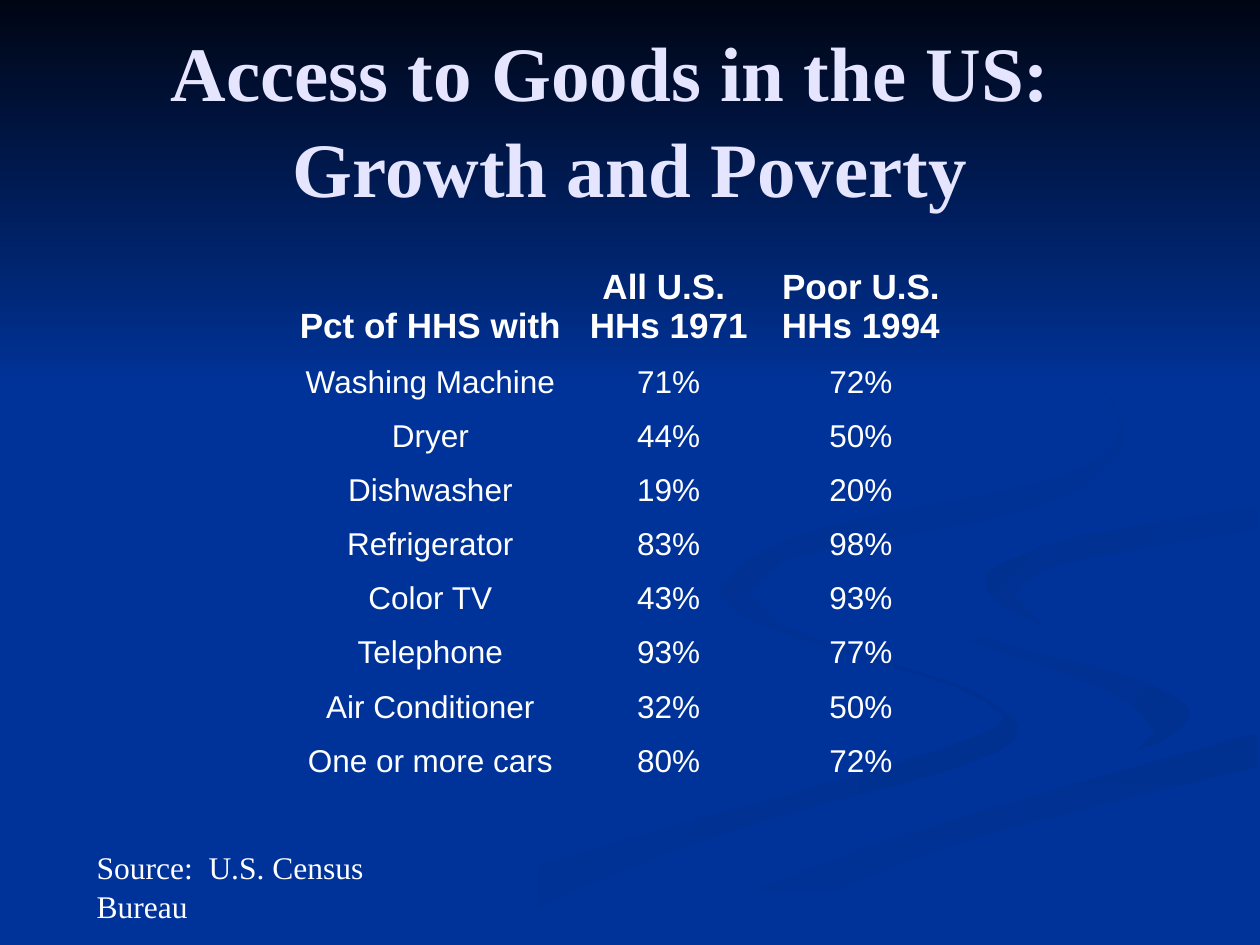
from dataclasses import dataclass

import pptx
import pptx.dml.color
import pptx.enum.text
import pptx.util

Cm = pptx.util.Cm
ALIGN = pptx.enum.text.PP_ALIGN
ANCHOR = pptx.enum.text.MSO_ANCHOR
PLAIN_TABLE = "{2D5ABB26-0587-4C30-8999-92F81FD0307C}"
CURVE_STEPS = 5


@dataclass(frozen=True)
class Theme:
    background: str = "003399"
    shade: str = "003090"
    night: str = "000514"
    title_color: str = "E5E5FF"
    text_color: str = "FFFFFF"
    serif: str = "Times New Roman"
    sans: str = "Arial"
    title_size: int = 44
    header_size: int = 20
    body_size: int = 18
    serif_spacing: float = 1.04


THEME = Theme()
LIGHT_TO_DARK = (THEME.background, THEME.shade)
DARK_TO_LIGHT = (THEME.shade, THEME.background)

RIBBONS = [
    (LIGHT_TO_DARK, 0,
     [(575, 459), (594, 485), (682, 519), (781, 553), (791, 597), (564, 665), (361, 749)],
     [(300, 749), (417, 690), (749, 594), (781, 556), (611, 499), (570, 472)]),
    (LIGHT_TO_DARK, 45,
     [(724, 464), (758, 498), (905, 540), (943, 570), (894, 605)],
     [(917, 580), (880, 549), (755, 505)]),
    (DARK_TO_LIGHT, 90,
     [(503, 749), (630, 693), (797, 638), (998, 581)],
     [(998, 609), (752, 672), (571, 749)]),
    ((THEME.background, THEME.background), 0,
     [(725, 464), (759, 498), (905, 540), (942, 579), (780, 634), (477, 749)],
     [(503, 749), (696, 669), (999, 581)],
     [(999, 538), (817, 492), (786, 453), (999, 402)],
     [(999, 387), (788, 422), (727, 454)]),
    (DARK_TO_LIGHT, 45,
     [(781, 460), (791, 478), (826, 496)],
     [(805, 472), (843, 448), (998, 420)],
     [(998, 402), (849, 427), (785, 453)]),
    (DARK_TO_LIGHT, 45,
     [(683, 430), (825, 402), (892, 354), (854, 283), (762, 233)],
     [(846, 279), (889, 335), (842, 378), (649, 420), (577, 462), (622, 500)],
     [(593, 470), (624, 444)]),
]

GOODS = [
    ("Pct of HHS with", "All U.S.  HHs 1971", "Poor U.S. HHs 1994"),
    ("Washing Machine", "71%", "72%"),
    ("Dryer", "44%", "50%"),
    ("Dishwasher", "19%", "20%"),
    ("Refrigerator", "83%", "98%"),
    ("Color TV", "43%", "93%"),
    ("Telephone", "93%", "77%"),
    ("Air Conditioner", "32%", "50%"),
    ("One or more cars", "80%", "72%"),
]


def smooth_edge(points):
    padded = [points[0], *points, points[-1]]
    curve = []
    for before, start, end, after in zip(padded, padded[1:], padded[2:], padded[3:]):
        for step in range(CURVE_STEPS):
            t = step / CURVE_STEPS
            curve.append(tuple(
                b + t / 2 * (c - a + t * (2 * a - 5 * b + 4 * c - d + t * (3 * (b - c) + d - a)))
                for a, b, c, d in zip(before, start, end, after)))
    return curve + [points[-1]]


class SlideBuilder:
    def __init__(self, presentation, theme):
        self.theme = theme
        self.slide = presentation.slides.add_slide(presentation.slide_layouts[5])
        fill = self.slide.background.fill
        fill.solid()
        fill.fore_color.rgb = self.color(theme.background)

    def color(self, value):
        return pptx.dml.color.RGBColor.from_string(value)

    def format_text(self, text_frame, font_name, size, color, bold=False,
                    alignment=ALIGN.LEFT, spacing=None):
        text_frame.word_wrap = True
        for paragraph in text_frame.paragraphs:
            paragraph.alignment = alignment
            if spacing:
                paragraph.line_spacing = spacing
            for run in paragraph.runs:
                run.font.name = font_name
                run.font.size = pptx.util.Pt(size)
                run.font.bold = bold
                run.font.color.rgb = self.color(color)

    def outline(self, colors, angle, points):
        builder = self.slide.shapes.build_freeform(*points[0], scale=Cm(2.54) / 100)
        builder.add_line_segments(points[1:], close=True)
        shape = builder.convert_to_shape()
        shape.shadow.inherit = False
        shape.line.fill.background()
        shape.fill.gradient()
        shape.fill.gradient_angle = -angle % 360
        for position, (stop, value) in enumerate(zip(shape.fill.gradient_stops, colors)):
            stop.position = position
            stop.color.rgb = self.color(value)

    def ribbon(self, colors, angle, *edges):
        self.outline(colors, angle, [point for edge in edges for point in smooth_edge(edge)])

    def title(self, text, left, top, width, height):
        shape = self.slide.shapes.title
        self.slide.shapes._spTree.append(shape._element)
        shape.left, shape.top, shape.width, shape.height = left, top, width, height
        shape.text_frame.text = text
        shape.text_frame.vertical_anchor = ANCHOR.MIDDLE
        self.format_text(shape.text_frame, self.theme.serif, self.theme.title_size,
                         self.theme.title_color, True, ALIGN.CENTER, self.theme.serif_spacing)

    def table(self, rows, left, top, column_widths, header_height, row_height):
        height = header_height + row_height * (len(rows) - 1)
        table = self.slide.shapes.add_table(
            len(rows), len(column_widths), left, top, sum(column_widths), height).table
        table.first_row = table.horz_banding = False
        table._tbl.tblPr[0].text = PLAIN_TABLE
        for column, width in zip(table.columns, column_widths):
            column.width = width
        for index, values in enumerate(rows):
            is_header = index == 0
            table.rows[index].height = header_height if is_header else row_height
            size = self.theme.header_size if is_header else self.theme.body_size
            for cell, value in zip(table.rows[index].cells, values):
                cell.fill.background()
                cell.text_frame.text = value
                cell.vertical_anchor = ANCHOR.BOTTOM
                cell.margin_left = cell.margin_right = cell.margin_top = Cm(0.03)
                cell.margin_bottom = 0
                self.format_text(cell.text_frame, self.theme.sans, size,
                                 self.theme.text_color, is_header, ALIGN.CENTER)

    def text(self, text, left, top, width, height):
        shape = self.slide.shapes.add_textbox(left, top, width, height)
        shape.text_frame.text = text
        self.format_text(shape.text_frame, self.theme.serif, self.theme.body_size,
                         self.theme.text_color, spacing=self.theme.serif_spacing)


def main():
    presentation = pptx.Presentation()
    presentation.slide_width = Cm(25.4)
    presentation.slide_height = Cm(19.05)
    builder = SlideBuilder(presentation, THEME)
    for ribbon in RIBBONS:
        builder.ribbon(*ribbon)
    builder.outline((THEME.night, THEME.background), 90,
                    [(0, 0), (0, 308), (1000, 308), (1000, 0)])
    builder.table(GOODS, Cm(5.51), Cm(4.24), [Cm(6.33), Cm(3.28), Cm(4.47)],
                  Cm(2.74), Cm(1.09))
    builder.title("Access to Goods in the US:  \vGrowth and Poverty",
                  Cm(1.27), Cm(0.76), Cm(22.86), Cm(3.18))
    builder.text("Source:  U.S. Census Bureau", Cm(1.7), Cm(16.94), Cm(7.52), Cm(1.02))
    presentation.save("out.pptx")


if __name__ == "__main__":
    main()
